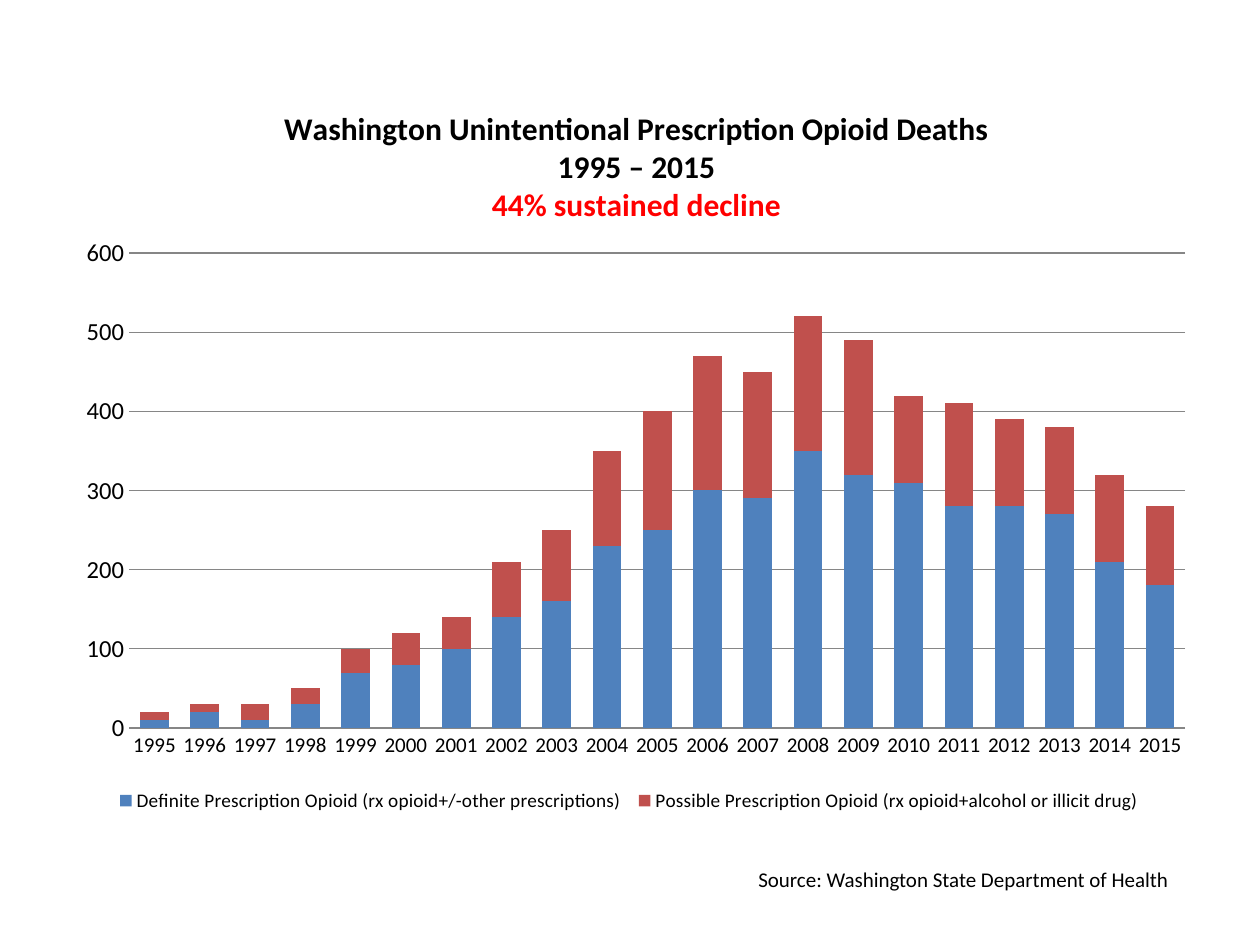
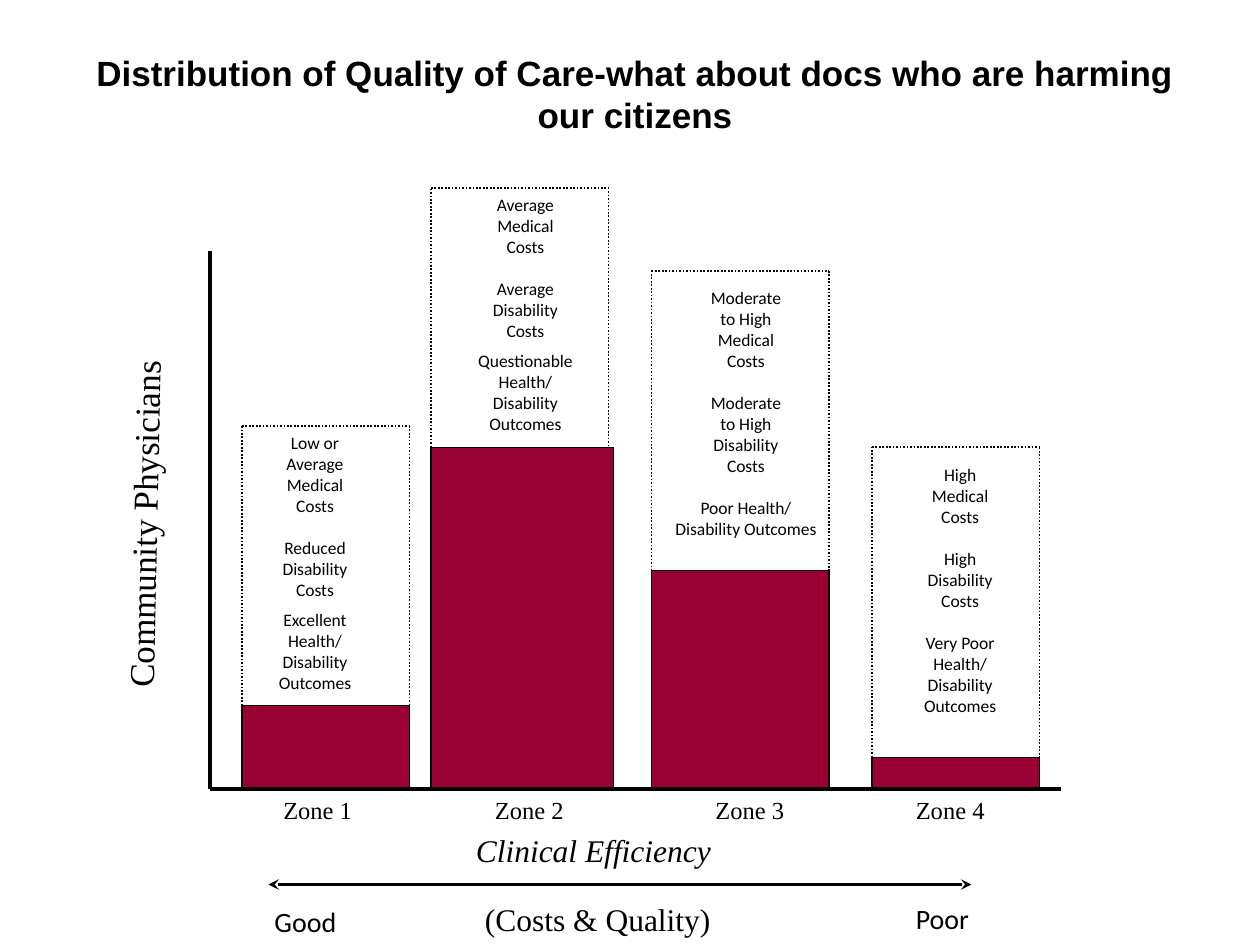
from collections import namedtuple

from lxml import etree
from pptx import Presentation
from pptx import util as u
from pptx.chart.data import CategoryChartData
from pptx.dml.color import RGBColor
from pptx.enum import chart as charts, dml, shapes, text
from pptx.oxml import parse_xml
from pptx.oxml.ns import nsdecls, qn

COLORS = {"ink": "000000", "alert": "FF0000", "definite": "4F81BD",
          "possible": "C0504D", "grid": "868686", "bar": "990033"}
BODY, TITLE, SERIF = "Calibri", "Arial", "Times New Roman"

Box = namedtuple("Box", "left top width height")
Zone = namedtuple("Zone", "left bar_width frame_width bar_height frame_height "
                          "label_left note_left note_drop note_width gaps notes")

YEARS = [str(year) for year in range(1995, 2016)]
DEATHS = [
    ("Definite Prescription Opioid (rx opioid+/-other prescriptions)", "definite",
     [10, 20, 10, 30, 70, 80, 100, 140, 160, 230, 250, 300, 290, 350, 320,
      310, 280, 280, 270, 210, 180]),
    ("Possible Prescription Opioid (rx opioid+alcohol or illicit drug)", "possible",
     [10, 10, 20, 20, 30, 40, 40, 70, 90, 120, 150, 170, 160, 170, 170,
      110, 130, 110, 110, 110, 100]),
]
# Lengths are measured from the origin of the axes; gaps are points between notes.
ZONES = [
    Zone(0.25, 1.33, 1.33, 0.66, 2.22, 0.23, -0.17, 0, 1.5, (0, 12, 5),
         ["Low or\nAverage\nMedical\nCosts", "Reduced\nDisability\nCosts",
          "Excellent\nHealth/\nDisability\nOutcomes"]),
    Zone(1.75, 1.45, 1.41, 2.71, 2.06, 0.41, 0, 0, 1.5, (0, 12, 5),
         ["Average\nMedical\nCosts", "Average\nDisability\nCosts",
          "Questionable\nHealth/\nDisability\nOutcomes"]),
    Zone(3.5, 1.41, 1.41, 1.73, 2.38, 0.41, 0.08, 0.08, 1.34, (0, 12, 12),
         ["Moderate\nto High\nMedical\nCosts", "Moderate\nto High\nDisability\nCosts",
          "Poor Health/\nDisability Outcomes"]),
    Zone(5.25, 1.33, 1.33, 0.25, 2.46, 0.25, -0.09, 0.08, 1.58, (0, 12, 12),
         ["High\nMedical\nCosts", "High\nDisability\nCosts",
          "Very Poor\nHealth/\nDisability\nOutcomes"]),
]


def color(name):
    return RGBColor.from_string(COLORS[name])


def inches(values):
    return [u.Inches(value) for value in values]


def style_font(font, size, name=BODY, ink="ink", bold=False, italic=False):
    font.size, font.name = u.Pt(size), name
    font.bold, font.italic = bold, italic
    font.color.rgb = color(ink)


def add_text(page, box, paragraphs, align="LEFT", anchor="TOP", wrap=True,
             gaps=(0,), rotation=0, **font):
    """Add a text box; newlines inside a paragraph become line breaks."""
    holder = page.shapes.add_textbox(*inches(box))
    holder.rotation = rotation
    frame = holder.text_frame
    frame.word_wrap = wrap
    frame.vertical_anchor = getattr(text.MSO_ANCHOR, anchor)
    for index, (content, gap) in enumerate(zip(paragraphs, gaps)):
        para = frame.add_paragraph() if index else frame.paragraphs[0]
        para.alignment = getattr(text.PP_ALIGN, align)
        para.space_before = u.Pt(gap)
        for number, line in enumerate(content.split("\n")):
            if number:
                para.add_line_break()
            span = para.add_run()
            span.text = line
            style_font(span.font, **font)
    return holder


def add_line(page, start, end, width, dotted=False, arrows=False):
    line = page.shapes.add_connector(shapes.MSO_CONNECTOR.STRAIGHT,
                                     *inches(start + end))
    line.line.color.rgb = color("ink")
    line.line.width = u.Pt(width)
    if dotted:
        line.line.dash_style = dml.MSO_LINE.ROUND_DOT
    properties = line._element.spPr
    if arrows:
        for tag in ("a:headEnd", "a:tailEnd"):
            etree.SubElement(properties.find(qn("a:ln")), qn(tag), type="stealth")
    etree.SubElement(properties, qn("a:effectLst"))


def place_part(part, index, **fractions):
    """Give a chart part a fixed place, as fractions of the chart."""
    for old in part.findall(qn("c:layout")):
        part.remove(old)
    inner = '<c:layoutTarget val="inner"/>' if part.tag == qn("c:plotArea") else ""
    modes = "".join(f'<c:{axis}Mode val="edge"/>' for axis in "xy")
    sizes = "".join(f'<c:{key} val="{value}"/>' for key, value in fractions.items())
    part.insert(index, parse_xml(
        f'<c:layout {nsdecls("c")}><c:manualLayout>{inner}{modes}{sizes}'
        '</c:manualLayout></c:layout>'))


def style_axis(axis, size):
    axis.major_tick_mark = axis.minor_tick_mark = charts.XL_TICK_MARK.NONE
    style_font(axis.tick_labels.font, size)


def add_deaths_chart(page, box):
    data = CategoryChartData()
    data.categories = YEARS
    for name, _, values in DEATHS:
        data.add_series(name, values)
    chart = page.shapes.add_chart(charts.XL_CHART_TYPE.COLUMN_STACKED,
                                  *inches(box), data).chart
    style_font(chart.font, 10)

    plot = chart.plots[0]
    plot.gap_width, plot.overlap, plot.vary_by_categories = 75, 100, False
    for series, (_, fill, _) in zip(plot.series, DEATHS):
        series.format.fill.solid()
        series.format.fill.fore_color.rgb = color(fill)

    years, counts = chart.category_axis, chart.value_axis
    style_axis(years, 12)
    style_axis(counts, 14)
    counts.minimum_scale, counts.maximum_scale, counts.major_unit = 0, 600, 100
    counts.has_major_gridlines = True
    counts.format.line.fill.background()
    for line in (years.format.line, counts.major_gridlines.format.line):
        line.color.rgb = color("grid")
        line.width = u.Pt(0.75)

    chart.has_title = True
    frame = chart.chart_title.text_frame
    headings = [("Washington Unintentional Prescription Opioid Deaths", "ink"),
                ("1995 – 2015", "ink"), ("44% sustained decline", "alert")]
    for index, (content, ink) in enumerate(headings):
        para = frame.add_paragraph() if index else frame.paragraphs[0]
        span = para.add_run()
        span.text = content
        style_font(span.font, 18, ink=ink, bold=True)

    chart.has_legend = True
    legend = chart.legend
    legend.position = charts.XL_LEGEND_POSITION.BOTTOM
    legend.include_in_layout = False
    style_font(legend.font, 11)

    place_part(chart.element.xpath("c:chart/c:title")[0], 1, x=0.19, y=0.04)
    place_part(chart.element.xpath("c:chart/c:plotArea")[0], 0,
               x=0.058, y=0.235, w=0.923, h=0.62)
    place_part(chart.element.xpath("c:chart/c:legend")[0], 1,
               x=0.04, y=0.93, w=0.91, h=0.04)


def add_zone(page, origin, number, zone):
    """Draw one bar, its dotted frame, its notes and its label on the axis."""
    left, base = origin[0] + zone.left, origin[1]
    right = left + zone.frame_width
    bar_top = base - zone.bar_height
    top = bar_top - zone.frame_height
    bar = page.shapes.add_shape(
        shapes.MSO_SHAPE.RECTANGLE,
        *inches((left, bar_top, zone.bar_width, zone.bar_height)))
    bar.shadow.inherit = False
    bar.fill.solid()
    bar.fill.fore_color.rgb = color("bar")
    bar.line.color.rgb = color("ink")
    bar.line.width = u.Pt(0.75)

    corners = [(left, bar_top), (left, top), (right, top), (right, bar_top)]
    for start, end in zip(corners, corners[1:]):
        add_line(page, start, end, 1, dotted=True)
    add_text(page, Box(left + zone.note_left, top + zone.note_drop,
                       zone.note_width, zone.frame_height - zone.note_drop),
             zone.notes, align="CENTER", gaps=zone.gaps, size=10)
    add_text(page, Box(left + zone.label_left, base, 0.77, 0.33),
             [f"Zone {number}"], wrap=False, size=14, name=SERIF)


def add_zone_diagram(page, box):
    origin = (box.left, box.top + box.height)
    for number, zone in enumerate(ZONES, 1):
        add_zone(page, origin, number, zone)
    add_line(page, (box.left, box.top), origin, 2.25)
    add_line(page, origin, (box.left + box.width, origin[1]), 2.25)
    add_text(page, Box(box.left - 1.98, box.top + 1.92, 2.96, 0.5),
             ["Community Physicians"], align="CENTER", rotation=271.1,
             size=20, name=SERIF)


def add_efficiency_scale(page, box):
    """Draw the arrow from good to poor with its captions."""
    arrow_y = box.top + 0.47
    add_line(page, (box.left + 0.05, arrow_y),
             (box.left + box.width - 0.17, arrow_y), 2, arrows=True)
    add_text(page, Box(box.left + 1.42, box.top, 2.42, 0.4),
             ["Clinical Efficiency"], align="CENTER", size=18, name=SERIF, italic=True)
    add_text(page, Box(box.left + 1.67, box.top + 0.54, 1.99, 0.4),
             ["(Costs & Quality)"], wrap=False, size=18, name=SERIF)
    add_text(page, Box(box.left, box.top + 0.58, 0.78, 0.37),
             ["Good"], wrap=False, size=16)
    add_text(page, Box(box.left + 5.09, box.top + 0.56, 0.71, 0.37),
             ["Poor"], wrap=False, size=16)


def build_deaths_slide(page):
    add_deaths_chart(page, Box(0.5, 0.58, 9.08, 6.08))
    add_text(page, Box(5.92, 6.83, 3.83, 0.3),
             ["Source: Washington State Department of Health"], size=12)


def build_quality_slide(page):
    add_text(page, Box(0.5, 0.42, 9.08, 0.64),
             ["Distribution of Quality of Care-what about docs who are harming "
              "our citizens"],
             align="CENTER", anchor="MIDDLE", size=20, name=TITLE, bold=True)
    add_zone_diagram(page, Box(1.67, 1.99, 6.75, 4.27))
    add_efficiency_scale(page, Box(2.08, 6.55, 5.8, 0.95))


def main():
    deck = Presentation()
    deck.slide_width, deck.slide_height = inches((10, 7.5))
    for build in (build_deaths_slide, build_quality_slide):
        build(deck.slides.add_slide(deck.slide_layouts[6]))
    deck.save("out.pptx")


if __name__ == "__main__":
    main()
